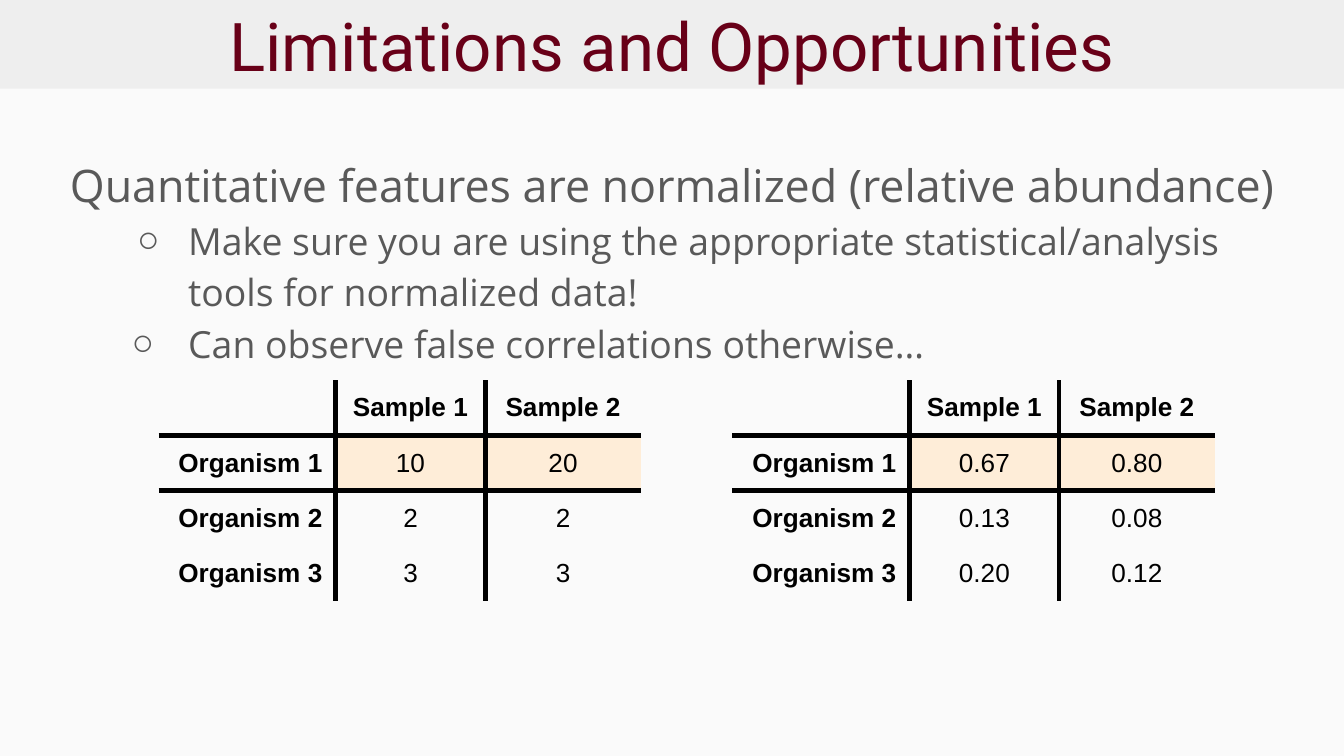
from lxml.etree import SubElement
from pptx import Presentation
from pptx.dml.color import RGBColor
from pptx.enum.text import MSO_ANCHOR, MSO_AUTO_SIZE, PP_ALIGN
from pptx.oxml.ns import qn
from pptx.util import Inches, Pt

COLORS = {
    "background": "FAFAFA",
    "band": "EEEEEE",
    "title": "680018",
    "body": "595959",
    "table": "000000",
    "highlight": "FEEDD8",
}

TITLE = "Limitations and Opportunities"

# text, level, size, left margin, first-line indent, bullet
BODY = [
    ("Quantitative features are normalized (relative abundance)", 0, 24, 0.08, 0, None),
    ("Make sure you are using the appropriate statistical/analysis tools for normalized data!",
     1, 20, 0.96, -0.38, "○"),
    ("Can observe false correlations otherwise…", 1, 20, 0.96, -0.42, "○"),
]

SAMPLES = ["Sample 1", "Sample 2"]
ORGANISMS = ["Organism 1", "Organism 2", "Organism 3"]
COUNTS = [("10", "20"), ("2", "2"), ("3", "3")]
ABUNDANCES = [("0.67", "0.80"), ("0.13", "0.08"), ("0.20", "0.12")]
TABLES = [(1.18, COUNTS), (5.45, ABUNDANCES)]

TABLE_TOP = 2.83
COL_WIDTHS = [1.32, 1.11, 1.16]
ROW_HEIGHT = 0.41
RULED_EDGES = (1, 2)  # grid lines drawn, counted from the top or left edge
RULE_WIDTH = 3
HIGHLIGHT_ROW = 1


def rgb(name):
    return RGBColor.from_string(COLORS[name])


def write(p, text, *, size, font, color, bold=False, align=PP_ALIGN.LEFT):
    p.alignment = align
    r = p.add_run()
    r.text = text
    r.font.size = Pt(size)
    r.font.name = font
    r.font.bold = bold
    r.font.color.rgb = rgb(color)


def place(sp, left, top, width, height, anchor):
    sp.left, sp.top = Inches(left), Inches(top)
    sp.width, sp.height = Inches(width), Inches(height)
    tf = sp.text_frame
    tf.word_wrap = True
    tf.auto_size = MSO_AUTO_SIZE.NONE
    tf.vertical_anchor = anchor
    tf.margin_left = tf.margin_right = tf.margin_top = tf.margin_bottom = Inches(0.1)
    return tf


def set_bullet(p, left, indent, bullet):
    pPr = p._p.get_or_add_pPr()
    pPr.set("marL", str(Inches(left)))
    pPr.set("indent", str(Inches(indent)))
    if bullet:
        clr = SubElement(pPr, qn("a:buClr"))
        SubElement(clr, qn("a:srgbClr"), val=COLORS["body"])
        SubElement(pPr, qn("a:buFont"), typeface="Arial")
        SubElement(pPr, qn("a:buChar"), char=bullet)
    else:
        SubElement(pPr, qn("a:buNone"))


def set_borders(cell, row, col):
    """Rule the cell sides that lie on a ruled edge and clear the others."""
    tcPr = cell._tc.get_or_add_tcPr()
    sides = {"lnL": col, "lnR": col + 1, "lnT": row, "lnB": row + 1}
    for tag, edge in sides.items():
        ln = SubElement(tcPr, qn(f"a:{tag}"), w=str(Pt(RULE_WIDTH)))
        if edge in RULED_EDGES:
            fill = SubElement(ln, qn("a:solidFill"))
            SubElement(fill, qn("a:srgbClr"), val=COLORS["table"])
        else:
            SubElement(ln, qn("a:noFill"))


def add_sample_table(s, left, values):
    rows = [["", *SAMPLES]] + [[name, *vals] for name, vals in zip(ORGANISMS, values)]
    frame = s.shapes.add_table(
        len(rows), len(COL_WIDTHS), Inches(left), Inches(TABLE_TOP),
        Inches(sum(COL_WIDTHS)), Inches(ROW_HEIGHT * len(rows)))
    table = frame.table
    table.first_row = table.horz_banding = False
    for column, width in zip(table.columns, COL_WIDTHS):
        column.width = Inches(width)
    for i, row in enumerate(rows):
        table.rows[i].height = Inches(ROW_HEIGHT)
        for j, text in enumerate(row):
            cell = table.cell(i, j)
            cell.vertical_anchor = MSO_ANCHOR.MIDDLE
            set_borders(cell, i, j)
            if i == HIGHLIGHT_ROW and j > 0:
                cell.fill.solid()
                cell.fill.fore_color.rgb = rgb("highlight")
            else:
                cell.fill.background()
            if text:
                write(cell.text_frame.paragraphs[0], text, size=14, font="Arial",
                      color="table", bold=i == 0 or j == 0,
                      align=PP_ALIGN.CENTER if j else PP_ALIGN.RIGHT)


def main():
    prs = Presentation()
    prs.slide_width = Inches(10)
    prs.slide_height = prs.slide_width * 9 // 16
    s = prs.slides.add_slide(prs.slide_layouts[1])
    s.background.fill.solid()
    s.background.fill.fore_color.rgb = rgb("background")

    title = s.shapes.title
    title.fill.solid()
    title.fill.fore_color.rgb = rgb("band")
    tf = place(title, 0, 0, 10, 0.66, MSO_ANCHOR.MIDDLE)
    write(tf.paragraphs[0], TITLE, size=36, font="Roboto", color="title",
          align=PP_ALIGN.CENTER)

    tf = place(s.placeholders[1], 0.34, 1.01, 9.32, 4.09, MSO_ANCHOR.TOP)
    for i, (text, level, size, left, indent, bullet) in enumerate(BODY):
        p = tf.add_paragraph() if i else tf.paragraphs[0]
        p.level = level
        p.line_spacing = 1.15
        p.space_before = Pt(0)
        set_bullet(p, left, indent, bullet)
        write(p, text, size=size, font="Open Sans", color="body")

    for left, values in TABLES:
        add_sample_table(s, left, values)

    prs.save("out.pptx")


if __name__ == "__main__":
    main()
